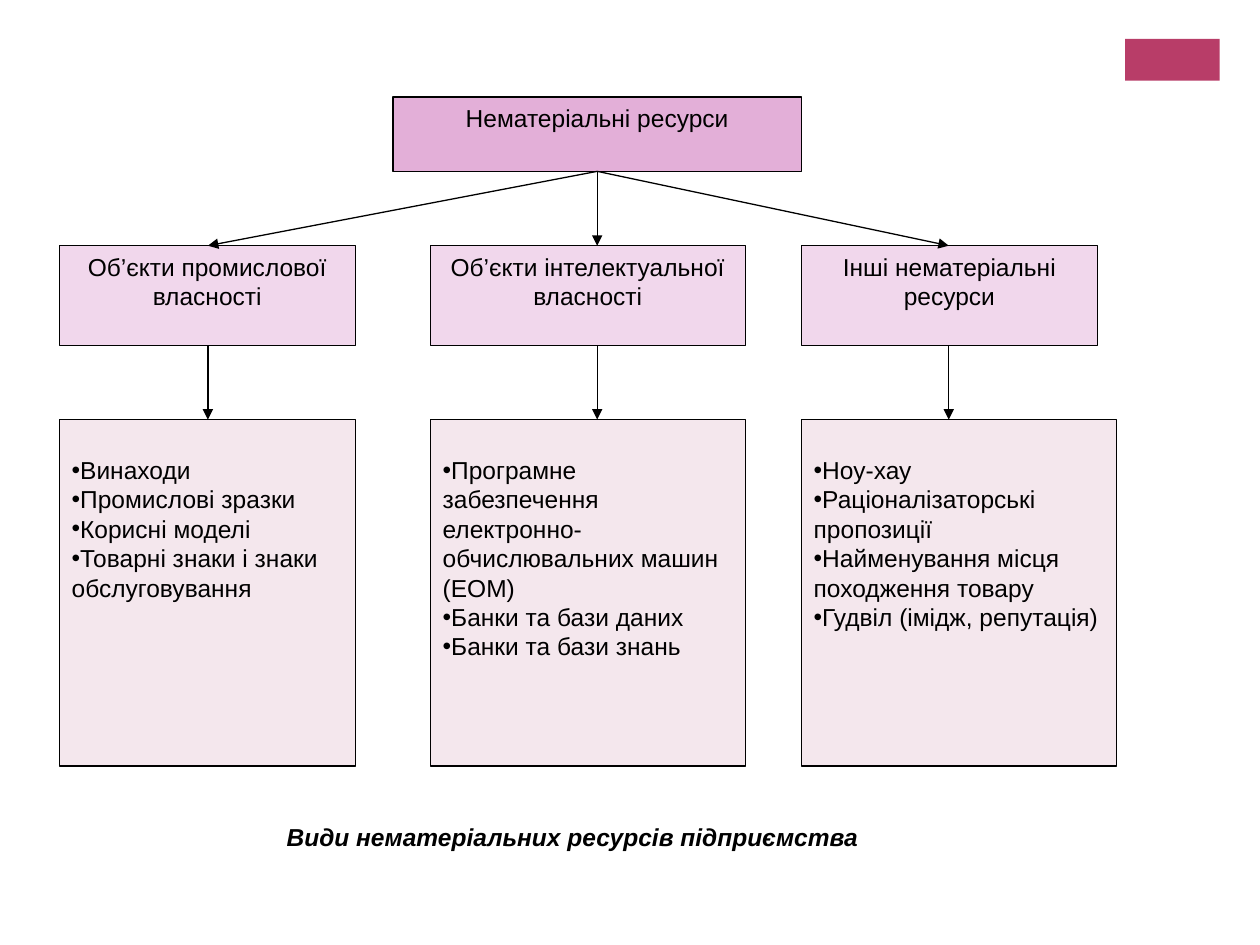
from lxml.etree import SubElement
from pptx import Presentation
from pptx.dml.color import RGBColor
from pptx.enum.shapes import MSO_CONNECTOR, MSO_SHAPE
from pptx.enum.text import MSO_ANCHOR, MSO_AUTO_SIZE, PP_ALIGN
from pptx.oxml.ns import qn
from pptx.util import Inches, Pt

# Content
ROOT = "Нематеріальні ресурси"
CAPTION = "Види нематеріальних ресурсів підприємства"
COLUMNS = [
    {"heading": "Об’єкти промислової власності",
     "items": ["Винаходи", "Промислові зразки", "Корисні моделі",
               "Товарні знаки і знаки обслуговування"],
     "heading_width": 2.35, "list_width": 2.35, "arrow_x": 1.65},
    {"heading": "Об’єкти інтелектуальної власності",
     "items": ["Програмне забезпечення електронно-обчислювальних машин (ЕОМ)",
               "Банки та бази даних", "Банки та бази знань"],
     "heading_width": 2.5, "list_width": 2.5, "arrow_x": 4.74},
    {"heading": "Інші нематеріальні ресурси",
     "items": ["Ноу-хау", "Раціоналізаторські пропозиції",
               "Найменування місця походження товару",
               "Гудвіл (імідж, репутація)"],
     "heading_width": 2.35, "list_width": 2.5, "arrow_x": 7.53},
]

THEME = {
    "accent": RGBColor.from_string("B83D68"),
    "root": RGBColor.from_string("E3AFD8"),
    "heading": RGBColor.from_string("F1D7EC"),
    "list": RGBColor.from_string("F4E7ED"),
    "paper": RGBColor.from_string("FFFFFF"),
    "ink": RGBColor.from_string("000000"),
    "font": "Arial",
    "size": Pt(14),
    "line": Pt(0.75),
}

# Layout in inches
COLUMN_LEFT, COLUMN_STEP = 0.47, 2.945
ROOT_BOX = (3.12, 0.77, 3.24, 0.59)
HEADING_TOP, HEADING_HEIGHT = 1.95, 0.79
LIST_TOP, LIST_HEIGHT = 3.33, 2.75
LIST_INSET = 0.28
CAPTION_BOX = (1.65, 6.47, 5.74, 0.59)
CAPTION_INSET = 0.15
ACCENT_BOX = (8.93, 0.31, 0.75, 0.33)


def set_all(target, values):
    for key, value in values.items():
        setattr(target, key, value)


def write(frame, lines, align, left_inset=0.1, top_inset=0.05, bulleted=False,
          **emphasis):
    set_all(frame, {"word_wrap": True, "auto_size": MSO_AUTO_SIZE.NONE,
                    "vertical_anchor": MSO_ANCHOR.TOP,
                    "margin_left": Inches(left_inset),
                    "margin_right": Inches(0.1),
                    "margin_top": Inches(top_inset),
                    "margin_bottom": Inches(0.05)})
    for index, line in enumerate(lines):
        paragraph = frame.paragraphs[0] if index == 0 else frame.add_paragraph()
        paragraph.alignment = align
        run = paragraph.add_run()
        run.text = line
        set_all(run.font, {"name": THEME["font"], "size": THEME["size"],
                           **emphasis})
        run.font.color.rgb = THEME["ink"]
        if bulleted:
            properties = paragraph._p.get_or_add_pPr()
            properties.set("marL", "0")
            properties.set("indent", "0")
            SubElement(properties, qn("a:buFont"), typeface=THEME["font"])
            SubElement(properties, qn("a:buChar"), char="•")


def paint(shape, fill, line):
    shape.fill.solid()
    shape.fill.fore_color.rgb = THEME[fill]
    if line:
        shape.line.color.rgb = THEME[line]
        shape.line.width = THEME["line"]
    else:
        shape.line.fill.background()


def add_box(slide, box, fill, line="ink"):
    shape = slide.shapes.add_shape(MSO_SHAPE.RECTANGLE, *map(Inches, box))
    shape.shadow.inherit = False
    paint(shape, fill, line)
    return shape


def add_arrow(slide, start, end):
    arrow = slide.shapes.add_connector(MSO_CONNECTOR.STRAIGHT,
                                       *map(Inches, (*start, *end)))
    arrow.line.color.rgb = THEME["ink"]
    arrow.line.width = THEME["line"]
    SubElement(arrow.line._get_or_add_ln(), qn("a:tailEnd"), type="triangle")
    SubElement(arrow._element.spPr, qn("a:effectLst"))


def main():
    deck = Presentation()
    deck.slide_width, deck.slide_height = Inches(10), Inches(7.5)
    slide = deck.slides.add_slide(deck.slide_layouts[5])

    # Caption below the diagram
    caption = slide.shapes.title
    set_all(caption, dict(zip(("left", "top", "width", "height"),
                              map(Inches, CAPTION_BOX))))
    paint(caption, "paper", "paper")
    write(caption.text_frame, [CAPTION], PP_ALIGN.CENTER,
          left_inset=CAPTION_INSET, bold=True, italic=True)

    # Corner accent and root of the tree
    add_box(slide, ACCENT_BOX, "accent", line=None)
    write(add_box(slide, ROOT_BOX, "root").text_frame, [ROOT], PP_ALIGN.CENTER)
    root_left, root_top, root_width, root_height = ROOT_BOX
    root_foot = (root_left + root_width / 2, root_top + root_height)

    # Branches: heading, list and the arrows leading to them
    for index, column in enumerate(COLUMNS):
        left = COLUMN_LEFT + index * COLUMN_STEP
        heading = add_box(slide, (left, HEADING_TOP, column["heading_width"],
                                  HEADING_HEIGHT), "heading")
        write(heading.text_frame, [column["heading"]], PP_ALIGN.CENTER)
        item_list = add_box(slide, (left, LIST_TOP, column["list_width"],
                                    LIST_HEIGHT), "list")
        write(item_list.text_frame, column["items"], PP_ALIGN.LEFT,
              top_inset=LIST_INSET, bulleted=True)
        x = column["arrow_x"]
        add_arrow(slide, root_foot, (x, HEADING_TOP))
        add_arrow(slide, (x, HEADING_TOP + HEADING_HEIGHT), (x, LIST_TOP))

    deck.save("out.pptx")


if __name__ == "__main__":
    main()
